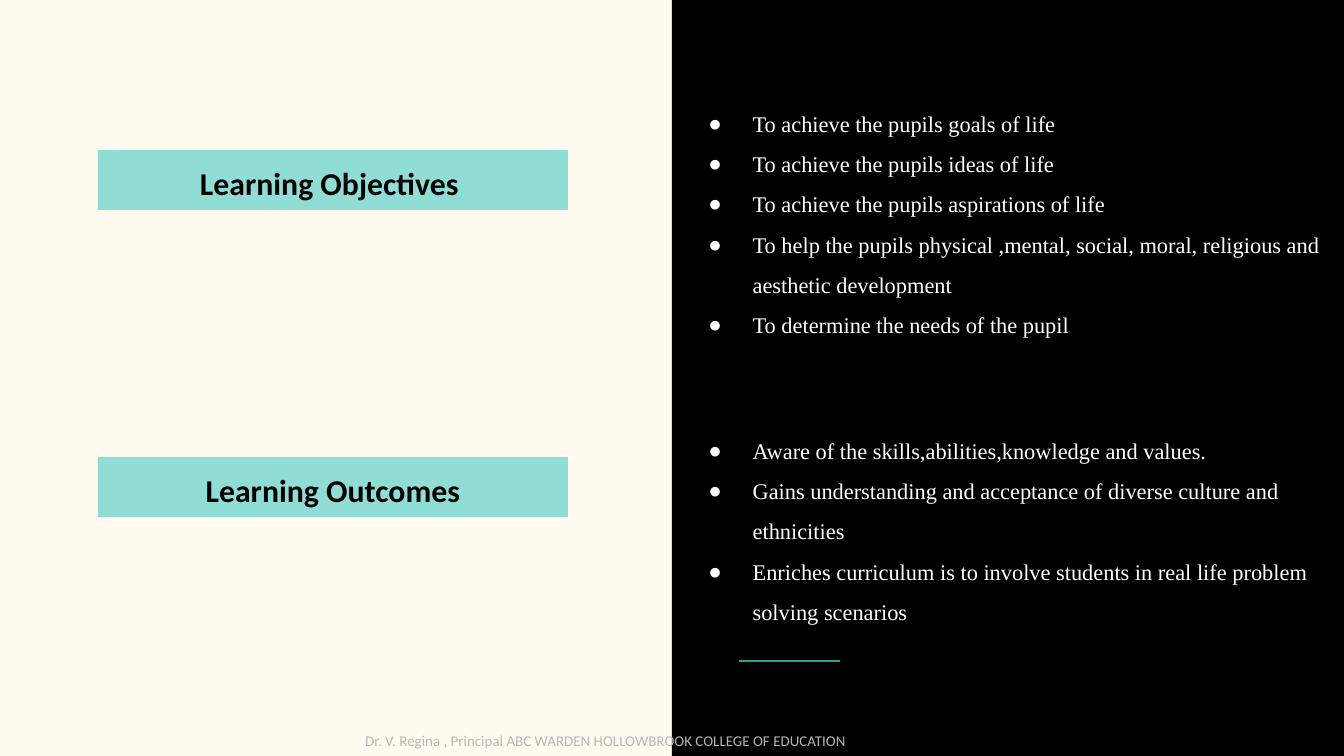
from lxml import etree
from pptx import Presentation
from pptx import util as u
from pptx.dml.color import RGBColor
from pptx.enum import shapes, text
from pptx.oxml import ns

PX = 914400 / 134.4
HUES = {"cream": "FFFBF0", "black": "000000", "mint": "90DDD6",
        "teal": "26A69A", "white": "FFFFFF", "grey": "B7B7B7"}

PARTS = [
    {"head": "Learning Objectives ", "band": 150, "top": 83, "high": 176,
     "goals": ["To achieve the pupils goals of life",
               "To achieve the pupils ideas of life",
               "To achieve the pupils aspirations of life",
               "To help the pupils physical ,mental, social, moral, religious and "
               "aesthetic development",
               "To determine the needs of the pupil"]},
    {"head": "Learning Outcomes", "band": 457, "top": 410, "high": 220,
     "goals": ["Aware of the skills,abilities,knowledge and values.",
               "Gains understanding and acceptance of diverse culture and ethnicities",
               "Enriches curriculum is to involve students in real life problem "
               "solving scenarios"]},
]
FOOT = "Dr. V. Regina , Principal ABC WARDEN HOLLOWBROOK COLLEGE OF EDUCATION"

HEAD = {"name": "Calibri", "size": u.Pt(17), "bold": True}
LIST = {"name": "Times New Roman", "size": u.Pt(12), "bold": False}
NOTE = {"name": "Calibri", "size": u.Pt(8), "bold": False}
MID = {"alignment": text.PP_ALIGN.CENTER, "line_spacing": 1.0}
LEFT = {"alignment": text.PP_ALIGN.LEFT, "line_spacing": 1.0}
WIDE = {"alignment": text.PP_ALIGN.LEFT, "line_spacing": 1.5}
GAPS = {"space_before": u.Pt(0), "space_after": u.Pt(0)}
FRAME = {"word_wrap": True, "auto_size": text.MSO_AUTO_SIZE.NONE,
         "vertical_anchor": text.MSO_ANCHOR.TOP,
         "margin_left": u.Inches(0.1), "margin_right": u.Inches(0.1),
         "margin_top": u.Inches(0.1), "margin_bottom": u.Inches(0.1)}


def px(n):
    return u.Emu(round(n * PX))


def hue(name):
    return RGBColor.from_string(HUES[name])


def put(obj, vals):
    for key, val in vals.items():
        setattr(obj, key, val)


def place(shape, *box):
    put(shape, dict(zip(("left", "top", "width", "height"), map(px, box))))


def paint(shape, name):
    shape.fill.solid()
    shape.fill.fore_color.rgb = hue(name)


def write(shape, lines, font, para, tint):
    frame = shape.text_frame
    put(frame, FRAME)
    for i, line in enumerate(lines):
        p = frame.paragraphs[0] if i == 0 else frame.add_paragraph()
        put(p, {**GAPS, **para})
        run = p.add_run()
        run.text = line
        put(run.font, font)
        run.font.color.rgb = hue(tint)


def mark(p):
    props = p._p.get_or_add_pPr()
    props.set("marL", str(u.Inches(0.5)))
    props.set("indent", str(-u.Inches(0.33)))
    tint = etree.SubElement(props, ns.qn("a:buClr"))
    etree.SubElement(tint, ns.qn("a:srgbClr"), val=HUES["white"])
    etree.SubElement(props, ns.qn("a:buChar"), char="●")


deck = Presentation()
put(deck, {"slide_width": px(1344), "slide_height": px(756)})
slide = deck.slides.add_slide(deck.slide_layouts.get_by_name("Comparison"))
paint(slide.background, "cream")
title, *slots = slide.placeholders
title.element.getparent().remove(title.element)

panel = slide.shapes.add_shape(shapes.MSO_SHAPE.RECTANGLE,
                               px(672), px(0), px(672), px(756))
panel.shadow.inherit = False
panel.line.fill.background()
paint(panel, "black")
rule = slide.shapes.add_connector(shapes.MSO_CONNECTOR.STRAIGHT,
                                  px(739), px(661), px(840), px(661))
rule.line.color.rgb = hue("teal")
rule.line.width = u.Pt(1.5)
etree.SubElement(rule.element.spPr, ns.qn("a:effectLst"))
for back in (rule, panel):
    slide.shapes._spTree.insert(2, back.element)

for part, band, body in zip(PARTS, slots[::2], slots[1::2]):
    place(band, 98, part["band"], 470, 60)
    paint(band, "mint")
    write(band, [part["head"]], HEAD, MID, "black")
    place(body, 672, part["top"], 672, part["high"])
    write(body, part["goals"], LIST, WIDE, "white")
    for p in body.text_frame.paragraphs:
        mark(p)

note = slide.shapes.add_textbox(px(352), px(718), px(732), px(38))
write(note, [FOOT], NOTE, LEFT, "grey")

deck.save("out.pptx")
